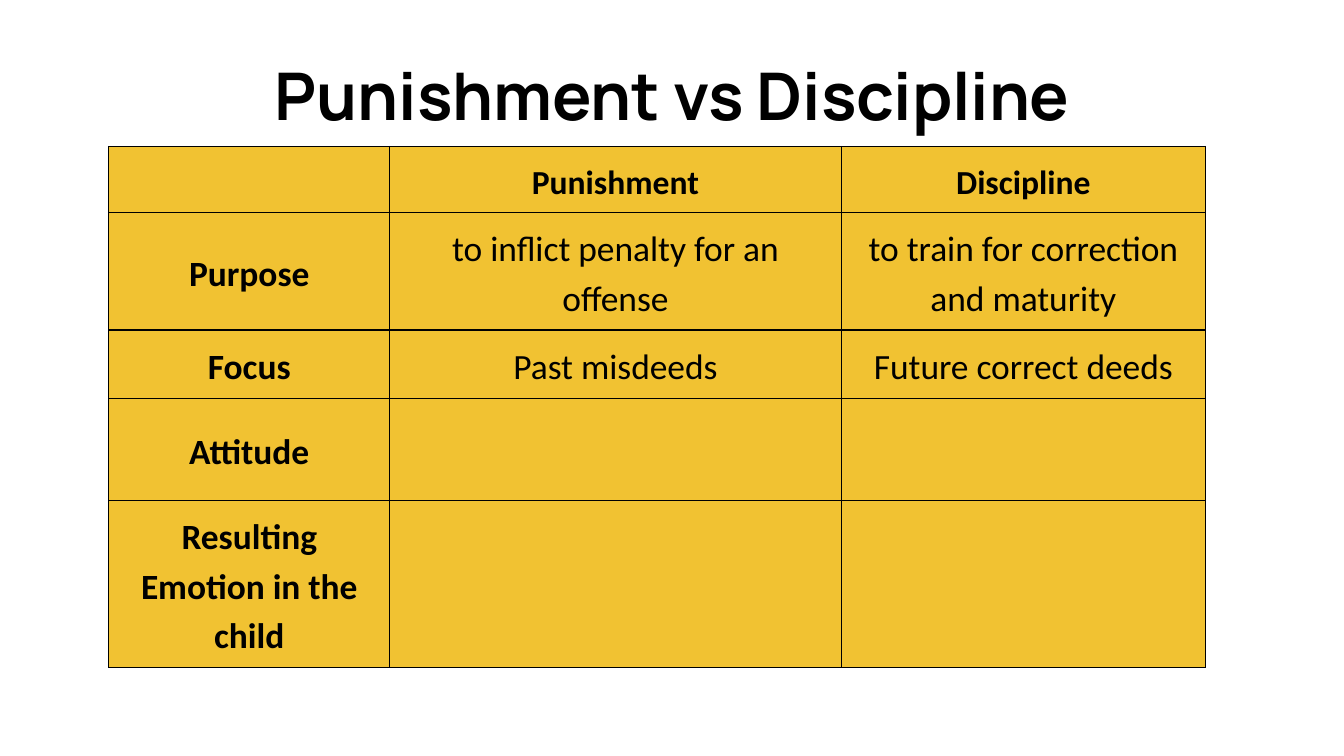
"""Build a slide with a table comparing punishment and discipline."""
from dataclasses import dataclass

from lxml.etree import SubElement
from pptx import Presentation
from pptx.dml.color import RGBColor
from pptx.enum.text import MSO_ANCHOR, MSO_AUTO_SIZE, PP_ALIGN
from pptx.oxml.ns import qn
from pptx.util import Inches, Pt


@dataclass(frozen=True)
class Theme:
    ink: RGBColor = RGBColor(0x00, 0x00, 0x00)
    gold: RGBColor = RGBColor(0xF1, 0xC2, 0x32)
    title_font: str = "Manrope"
    body_font: str = "Calibri"
    title_size: float = 35.2
    header_size: int = 18
    body_size: int = 19
    border_width: float = 0.75


theme = Theme()


def write_text(frame, text, *, font, size, bold=False, spacing=1.0):
    frame.word_wrap = True
    paragraph = frame.paragraphs[0]
    paragraph.alignment = PP_ALIGN.CENTER
    paragraph.line_spacing = spacing
    run = paragraph.add_run()
    run.text = text
    run.font.name = font
    run.font.size = Pt(size)
    run.font.bold = bold
    run.font.color.rgb = theme.ink


def add_borders(cell):
    properties = cell._tc.get_or_add_tcPr()
    for index, side in enumerate(("lnL", "lnR", "lnT", "lnB")):
        line = properties.makeelement(qn(f"a:{side}"), {"w": str(Pt(theme.border_width))})
        fill = SubElement(line, qn("a:solidFill"))
        SubElement(fill, qn("a:srgbClr"), val=str(theme.ink))
        properties.insert(index, line)


presentation = Presentation()
presentation.slide_width = Inches(10)
presentation.slide_height = Inches(10 * 9 / 16)
slide = presentation.slides.add_slide(presentation.slide_layouts[5])

title = slide.shapes.title
title.left, title.top = Inches(0.34), Inches(0.31)
title.width, title.height = Inches(9.32), Inches(0.77)
title_frame = title.text_frame
title_frame.auto_size = MSO_AUTO_SIZE.NONE
title_frame.vertical_anchor = MSO_ANCHOR.TOP
title_frame.margin_left = title_frame.margin_right = Inches(0.1)
title_frame.margin_top = title_frame.margin_bottom = Inches(0.1)
write_text(title_frame, "Punishment vs Discipline", font=theme.title_font,
           size=theme.title_size, bold=True)

rows = [
    ("", "Punishment", "Discipline"),
    ("Purpose", "to inflict penalty for an offense", "to train for correction and maturity"),
    ("Focus", "Past misdeeds", "Future correct deeds"),
    ("Attitude", "", ""),
    ("Resulting Emotion in the child", "", ""),
]
column_widths = [2.09, 3.36, 2.71]
row_heights = [0.47, 0.76, 0.47, 0.76, 1.05]
centred_labels = {"Purpose", "Attitude"}

table = slide.shapes.add_table(
    len(rows), len(column_widths), Inches(0.81), Inches(1.09),
    Inches(sum(column_widths)), Inches(sum(row_heights))).table
for column, width in zip(table.columns, column_widths):
    column.width = Inches(width)
for row, height in zip(table.rows, row_heights):
    row.height = Inches(height)

for row_index, texts in enumerate(rows):
    for column_index, text in enumerate(texts):
        cell = table.cell(row_index, column_index)
        cell.fill.solid()
        cell.fill.fore_color.rgb = theme.gold
        cell.margin_left = cell.margin_right = Inches(0.07)
        cell.margin_top = cell.margin_bottom = Inches(0.07)
        add_borders(cell)
        if text in centred_labels:
            cell.vertical_anchor = MSO_ANCHOR.MIDDLE
        if text:
            write_text(cell.text_frame, text, font=theme.body_font,
                       size=theme.body_size if row_index else theme.header_size,
                       bold=row_index == 0 or column_index == 0, spacing=1.15)

presentation.save("out.pptx")
